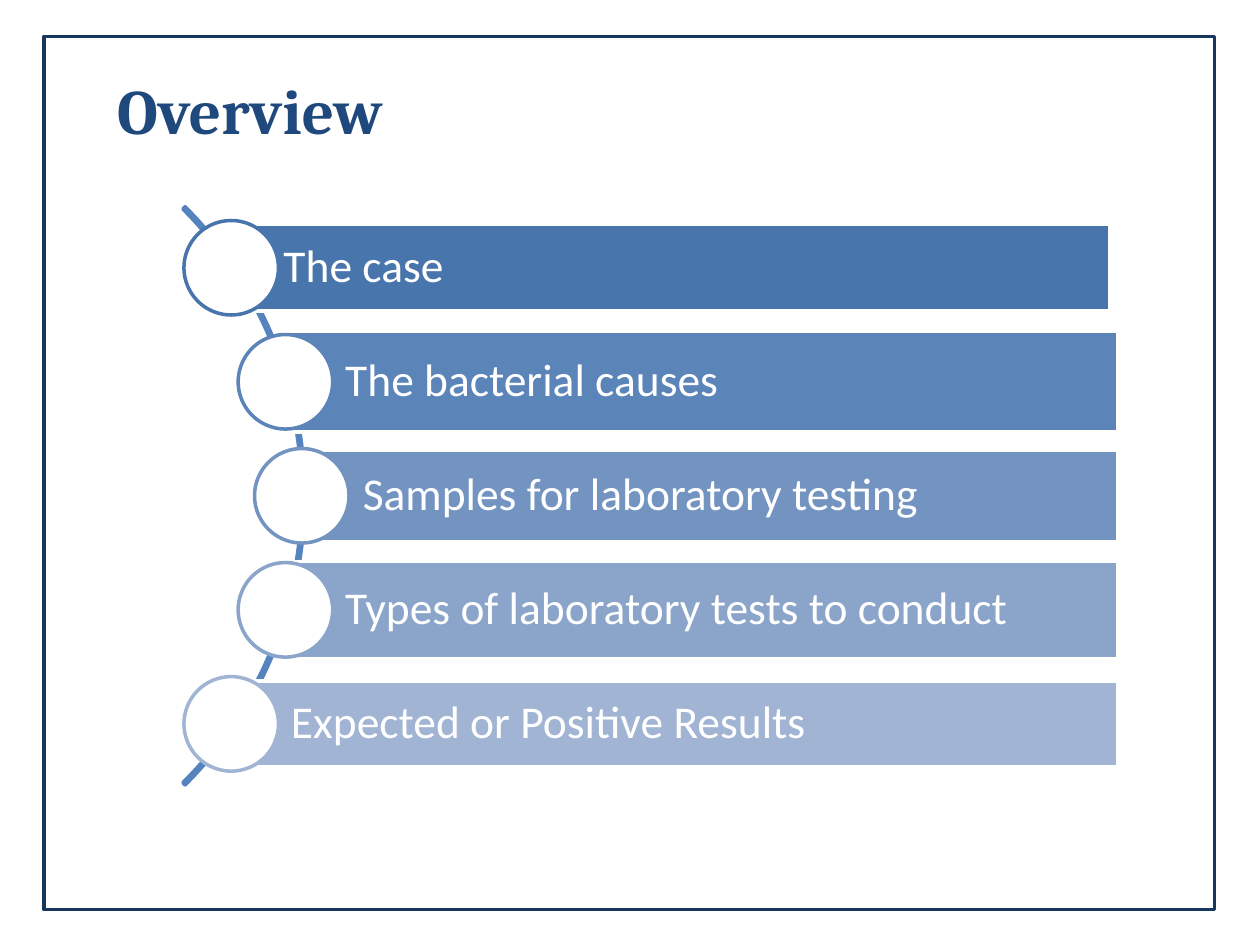
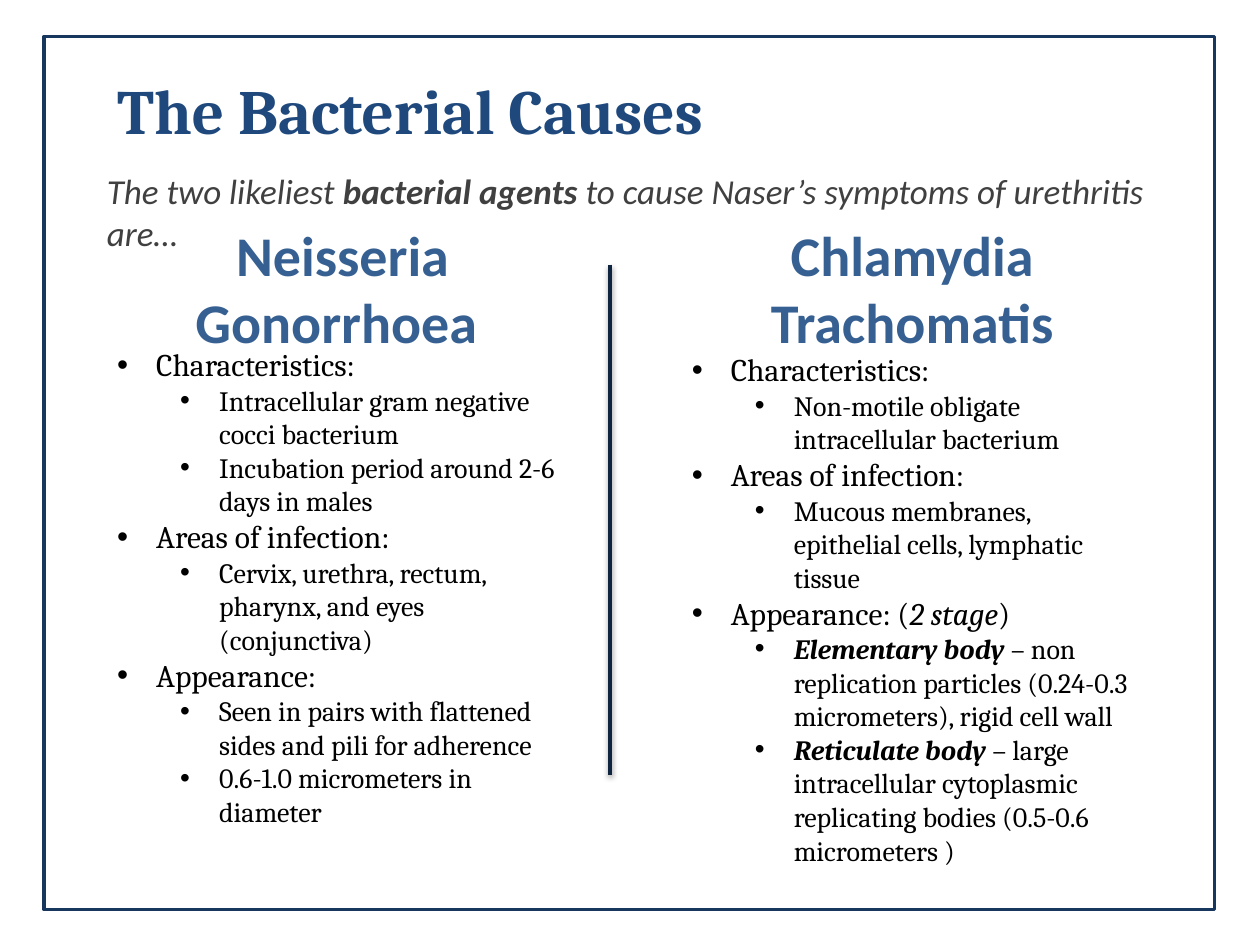
from lxml import etree
from pptx import Presentation
from pptx.dml.color import RGBColor
from pptx.enum.shapes import MSO_CONNECTOR, MSO_SHAPE
from pptx.enum.text import MSO_ANCHOR, MSO_AUTO_SIZE, PP_ALIGN
from pptx.oxml.ns import qn
from pptx.util import Inches, Pt

RECTANGLE, OVAL, ARC = MSO_SHAPE.RECTANGLE, MSO_SHAPE.OVAL, MSO_SHAPE.BLOCK_ARC
STRAIGHT = MSO_CONNECTOR.STRAIGHT
TOP, MIDDLE = MSO_ANCHOR.TOP, MSO_ANCHOR.MIDDLE
LEFT, CENTER = PP_ALIGN.LEFT, PP_ALIGN.CENTER
NO_FIT = MSO_AUTO_SIZE.NONE

COMPARISON_LAYOUT, TITLE_LAYOUT = 4, 5
HEADING_FONT, BODY_FONT = "Cambria", "Calibri"
WHITE, BLACK, NAVY, TITLE_BLUE = "FFFFFF", "000000", "17375E", "1F497D"
HEADING_BLUE, DIVIDER, GREY, ARC_BLUE = "376092", "0F243E", "404040", "5483BE"

AGENDA_BOX = (1.46, 1.75, 7.41, 4.37)
CIRCLE_SIZE = 0.75
AGENDA = [
    # (label, colour, circle offset, bar offset, bar width, bar height)
    ("The case", "4875AC", 0, 0.31, 7.04, 0.69),
    ("The bacterial causes", "5B84B9", 0.43, 0.8, 6.61, 0.8),
    ("Samples for laboratory testing", "7393C1", 0.56, 0.94, 6.47, 0.73),
    ("Types of laboratory tests to conduct", "8BA4CA", 0.43, 0.8, 6.61, 0.77),
    ("Expected or Positive Results", "A2B4D4", 0, 0.37, 7.04, 0.68),
]

INTRO = [
    ("The two likeliest ", "i"),
    ("bacterial agents ", "bi"),
    ("to cause Naser’s symptoms of urethritis are…", "i"),
]
GONORRHOEA = [
    (0, [("Characteristics:", "")]),
    (1, [("Intracellular gram negative cocci bacterium", "")]),
    (1, [("Incubation period around 2-6 days in males", "")]),
    (0, [("Areas of infection:", "")]),
    (1, [("Cervix, urethra, rectum, pharynx, and eyes (conjunctiva)", "")]),
    (0, [("Appearance:", "")]),
    (1, [("Seen in pairs with flattened sides and pili for adherence", "")]),
    (1, [("0.6-1.0 micrometers in diameter", "")]),
]
CHLAMYDIA = [
    (0, [("Characteristics:", "")]),
    (1, [("Non-motile obligate intracellular bacterium", "")]),
    (0, [("Areas of infection:", "")]),
    (1, [("Mucous membranes, epithelial cells, lymphatic tissue", "")]),
    (0, [("Appearance: (", ""), ("2 stage", "i"), (")", "")]),
    (1, [("Elementary body ", "bi"),
         ("– non replication particles (0.24-0.3 micrometers), rigid cell wall", "")]),
    (1, [("Reticulate body ", "bi"),
         ("– large intracellular cytoplasmic replicating bodies (0.5-0.6 micrometers )", "")]),
]
CAUSES = [
    # (heading, heading box, points, list box)
    ("Neisseria Gonorrhoea ", (0.87, 1.7, 3.7, 1.18), GONORRHOEA, (0.83, 2.69, 3.78, 3.97)),
    ("Chlamydia Trachomatis", (5.39, 1.7, 3.7, 1.18), CHLAMYDIA, (5.39, 2.73, 3.78, 4.81)),
]


def color(value):
    """Turn a hex string into a colour."""
    return RGBColor.from_string(value)


def place(shape, box):
    """Move a shape to a box given in inches."""
    shape.left, shape.top, shape.width, shape.height = map(Inches, box)


def add_shape(slide, kind, box, line, fill=None):
    """Add a flat preset shape with a two point outline."""
    shape = slide.shapes.add_shape(kind, *map(Inches, box))
    shape.shadow.inherit = False
    shape.line.color.rgb = color(line)
    shape.line.width = Pt(2)
    if fill:
        shape.fill.solid()
        shape.fill.fore_color.rgb = color(fill)
    else:
        shape.fill.background()
    return shape


def prepare_text(shape, anchor=TOP):
    """Set wrapping and anchor, and return the text frame."""
    frame = shape.text_frame
    frame.word_wrap = True
    frame.auto_size = NO_FIT
    frame.vertical_anchor = anchor
    return frame


def write(paragraph, runs, size, font, text_color, align=LEFT):
    """Fill a paragraph with runs whose style letters are b and i."""
    paragraph.alignment = align
    paragraph.space_before = Pt(0)
    for text, style in runs:
        run = paragraph.add_run()
        run.text = text
        run.font.size = Pt(size)
        run.font.name = font
        run.font.bold = "b" in style
        run.font.italic = "i" in style
        run.font.color.rgb = color(text_color)


def add_bullet(paragraph, left):
    """Give a paragraph a round bullet with a hanging indent."""
    properties = paragraph._p.get_or_add_pPr()
    properties.set("marL", str(Inches(left)))
    properties.set("indent", str(Inches(-0.31)))
    etree.SubElement(properties, qn("a:buFont"), typeface="Arial")
    etree.SubElement(properties, qn("a:buChar"), char="•")


def start_slide(presentation, layout, title, title_width):
    """Add a slide with the shared frame and title style."""
    slide = presentation.slides.add_slide(presentation.slide_layouts[layout])
    add_shape(slide, RECTANGLE, (0.35, 0.29, 9.29, 6.93), NAVY)
    place(slide.shapes.title, (0.83, 0.52, title_width, 0.71))
    frame = prepare_text(slide.shapes.title)
    write(frame.paragraphs[0], [(title, "b")], 36, HEADING_FONT, TITLE_BLUE)
    return slide


def add_agenda(slide, box):
    """Draw labelled bars with circles strung along an arc."""
    left, top, _, height = box
    arc_size = 6.49
    arc_top = top + (height - arc_size) / 2
    arc = add_shape(slide, ARC, (left - 5.53, arc_top, arc_size, arc_size), ARC_BLUE)
    for index, value in enumerate((189, 27, 0.004)):
        arc.adjustments[index] = value
    pitch = (height - CIRCLE_SIZE) / (len(AGENDA) - 1)
    for index, (label, fill, circle_x, bar_x, bar_width, bar_height) in enumerate(AGENDA):
        circle_top = top + index * pitch
        bar_top = circle_top + (CIRCLE_SIZE - bar_height) / 2
        bar = add_shape(slide, RECTANGLE, (left + bar_x, bar_top, bar_width, bar_height), WHITE, fill)
        frame = prepare_text(bar, MIDDLE)
        frame.margin_left = Inches(0.48)
        frame.margin_right = frame.margin_top = frame.margin_bottom = Inches(0.07)
        write(frame.paragraphs[0], [(label, "")], 26, BODY_FONT, WHITE)
        frame.paragraphs[0].line_spacing = 0.9
        add_shape(slide, OVAL, (left + circle_x, circle_top, CIRCLE_SIZE, CIRCLE_SIZE), fill, WHITE)


def add_divider(slide, x, top, bottom):
    """Draw the vertical rule with its soft shadow."""
    line = slide.shapes.add_connector(STRAIGHT, *map(Inches, (x, top, x, bottom)))
    line.line.color.rgb = color(DIVIDER)
    line.line.width = Pt(2)
    effects = etree.SubElement(line._element.spPr, qn("a:effectLst"))
    shadow = etree.SubElement(effects, qn("a:outerShdw"), blurRad=str(Pt(3.1)),
                              dist=str(Pt(1.6)), dir="5400000", rotWithShape="0")
    shade = etree.SubElement(shadow, qn("a:srgbClr"), val=BLACK)
    etree.SubElement(shade, qn("a:alpha"), val="38000")


def fill_cause(heading_shape, list_shape, heading, heading_box, points, list_box):
    """Fill one column with its heading and two-level list."""
    place(heading_shape, heading_box)
    frame = prepare_text(heading_shape)
    write(frame.paragraphs[0], [(heading, "b")], 32, BODY_FONT, HEADING_BLUE, CENTER)
    place(list_shape, list_box)
    frame = prepare_text(list_shape)
    for index, (level, runs) in enumerate(points):
        paragraph = frame.add_paragraph() if index else frame.paragraphs[0]
        paragraph.level = level
        write(paragraph, runs, 18 - 2 * level, HEADING_FONT, BLACK)
        add_bullet(paragraph, 0.31 + 0.5 * level)


def build_overview(presentation):
    """Build the overview slide."""
    slide = start_slide(presentation, TITLE_LAYOUT, "Overview", 4.57)
    add_agenda(slide, AGENDA_BOX)


def build_causes(presentation):
    """Build the comparison of the two bacteria."""
    slide = start_slide(presentation, COMPARISON_LAYOUT, "The Bacterial Causes", 5.83)
    for index, cause in enumerate(CAUSES):
        fill_cause(slide.placeholders[2 * index + 1], slide.placeholders[2 * index + 2], *cause)
    add_divider(slide, 4.84, 2.1, 6.15)
    intro = slide.shapes.add_textbox(*map(Inches, (0.75, 1.3, 8.73, 0.44)))
    write(prepare_text(intro).paragraphs[0], INTRO, 20, BODY_FONT, GREY)


def main():
    """Build and save the presentation."""
    presentation = Presentation()
    presentation.slide_width, presentation.slide_height = Inches(10), Inches(7.5)
    build_overview(presentation)
    build_causes(presentation)
    presentation.save("out.pptx")


if __name__ == "__main__":
    main()
